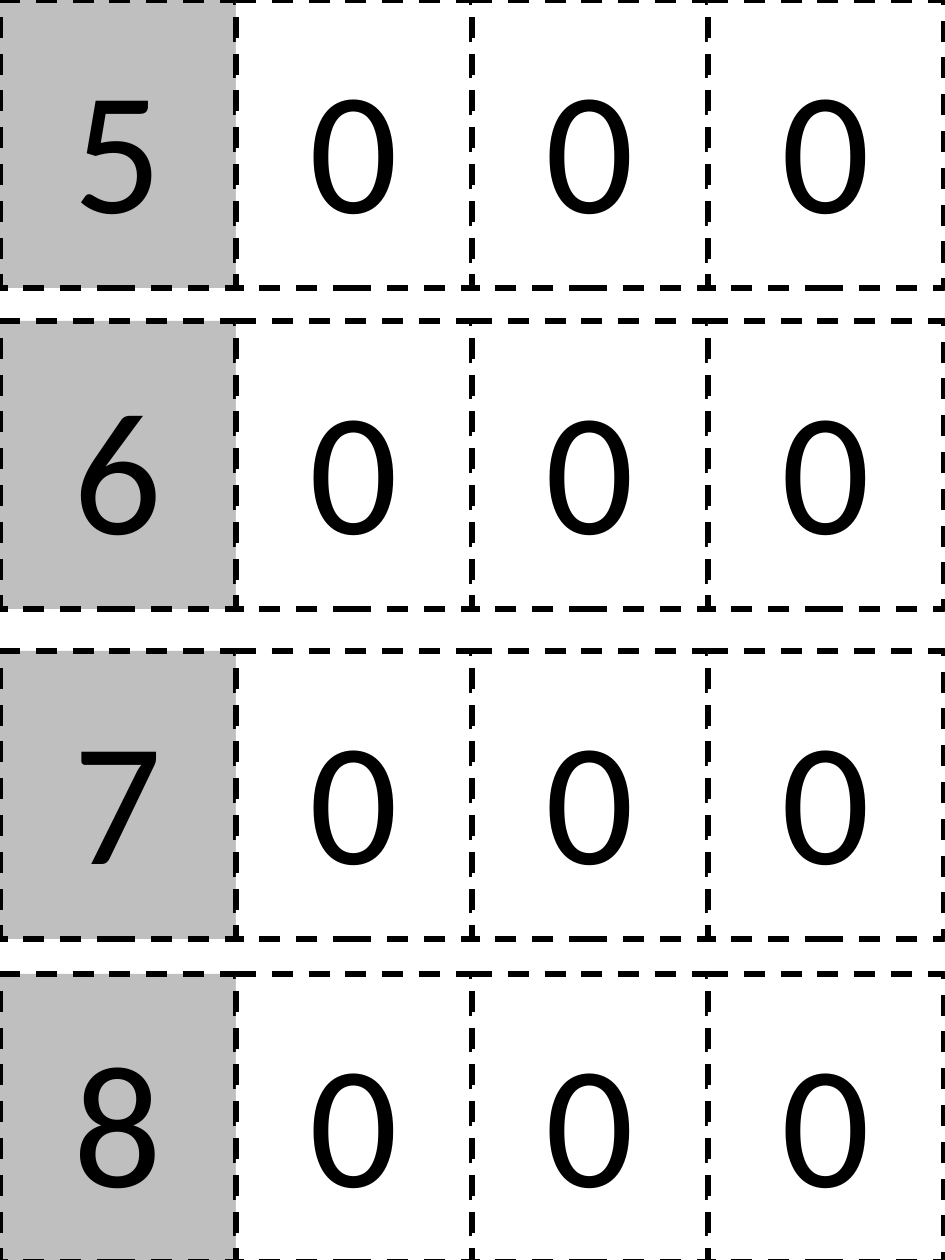
import pptx
import pptx.util
from pptx.dml.color import RGBColor
from pptx.enum.dml import MSO_LINE
from pptx.enum.shapes import MSO_SHAPE
from pptx.enum.text import MSO_ANCHOR, PP_ALIGN

PX = 914400 // 126  # EMU per px
BLACK = RGBColor(0x00, 0x00, 0x00)
WHITE = RGBColor(0xFF, 0xFF, 0xFF)
GRAY = RGBColor(0xBF, 0xBF, 0xBF)

CARD_W, CARD_H = 236, 288
ROWS = [("5000", 0), ("6000", 321), ("7000", 651), ("8000", 974)]

prs = pptx.Presentation()
prs.slide_width = pptx.util.Inches(7.5)
prs.slide_height = pptx.util.Inches(10)
s = prs.slides.add_slide(prs.slide_layouts[6])

# One group of four digit cards per number
for number, top in ROWS:
    grp = s.shapes.add_group_shape()
    for col, digit in enumerate(number):
        sp = grp.shapes.add_shape(
            MSO_SHAPE.RECTANGLE,
            col * CARD_W * PX, top * PX, CARD_W * PX, CARD_H * PX)
        sp.shadow.inherit = False

        # Thousands card is shaded, every card has a dashed cut line
        sp.fill.solid()
        sp.fill.fore_color.rgb = GRAY if col == 0 else WHITE
        sp.line.color.rgb = BLACK
        sp.line.width = pptx.util.Pt(3)
        sp.line.dash_style = MSO_LINE.DASH

        # Digit
        tf = sp.text_frame
        tf.text = digit
        tf.vertical_anchor = MSO_ANCHOR.MIDDLE
        p = tf.paragraphs[0]
        p.alignment = PP_ALIGN.CENTER
        r = p.runs[0]
        r.font.name = "Calibri"
        r.font.size = pptx.util.Pt(100)
        r.font.color.rgb = BLACK

prs.save("out.pptx")
